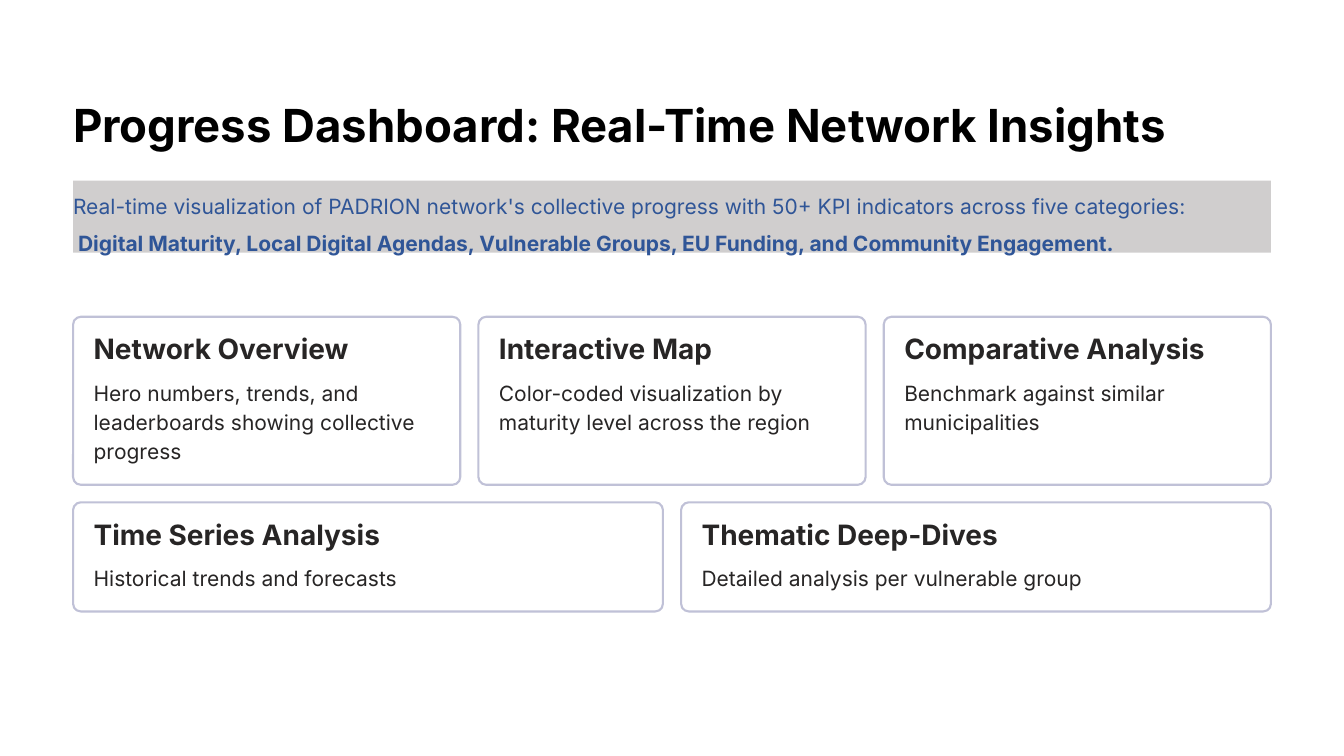
from pptx import Presentation
from pptx.dml.color import RGBColor
from pptx.enum.shapes import MSO_SHAPE
from pptx.enum.text import MSO_ANCHOR, PP_ALIGN
from pptx.util import Cm, Pt

RECT = MSO_SHAPE.RECTANGLE
ROUND = MSO_SHAPE.ROUNDED_RECTANGLE
TOP = MSO_ANCHOR.TOP
LEFT = PP_ALIGN.LEFT

COLORS = {
    "title": "000000",
    "band": "D0CECE",
    "intro": "2F5597",
    "card": "FFFFFF",
    "edge": "C0C1D7",
    "text": "272525",
}

deck = Presentation()
deck.slide_width, deck.slide_height = Cm(40.64), Cm(22.86)
slide = deck.slides.add_slide(deck.slide_layouts[6])
shapes = slide.shapes


def color(name):
    return RGBColor.from_string(COLORS[name])


def write(shape, text, size, ink, space, bold=False, wrap=True):
    frame = shape.text_frame
    frame.margin_left = frame.margin_right = 0
    frame.margin_top = frame.margin_bottom = 0
    frame.vertical_anchor = TOP
    frame.word_wrap = wrap
    frame.text = text
    for para in frame.paragraphs:
        para.alignment = LEFT
        para.line_spacing = space
        for run in para.runs:
            run.font.name = "Inter"
            run.font.size = Pt(size)
            run.font.bold = bold
            run.font.color.rgb = color(ink)


# Page grid, in centimetres
left, width, gap, pad = 2.21, 36.22, 0.55, 0.62

# Title
title = shapes.add_textbox(Cm(left), Cm(2.87), Cm(33.12), Cm(1.73))
write(title, "Progress Dashboard: Real-Time Network Insights",
      39, "title", Pt(48.5), bold=True, wrap=False)

# Intro band
band = shapes.add_shape(RECT, Cm(left), Cm(5.46), Cm(width), Cm(2.18))
band.shadow.inherit = False
band.fill.solid()
band.fill.fore_color.rgb = color("band")
band.line.fill.background()
write(band,
      "Real-time visualization of PADRION network's collective progress "
      "with 50+ KPI indicators across five categories:\n"
      " Digital Maturity, Local Digital Agendas, Vulnerable Groups, "
      "EU Funding, and Community Engagement.",
      18, "intro", 1.5)
band.text_frame.paragraphs[1].runs[0].font.bold = True

# Card rows: top, height, corner, cards
rows = [
    (9.58, 5.08, 0.046, [
        ("Network Overview",
         "Hero numbers, trends, and leaderboards showing collective progress"),
        ("Interactive Map",
         "Color-coded visualization by maturity level across the region"),
        ("Comparative Analysis",
         "Benchmark against similar municipalities"),
    ]),
    (15.19, 3.3, 0.07, [
        ("Time Series Analysis", "Historical trends and forecasts"),
        ("Thematic Deep-Dives", "Detailed analysis per vulnerable group"),
    ]),
]

for top, height, corner, cards in rows:
    wide = (width - gap * (len(cards) - 1)) / len(cards)
    inner = wide - 2 * pad
    for col, (name, detail) in enumerate(cards):
        x = left + col * (wide + gap)
        card = shapes.add_shape(ROUND, Cm(x), Cm(top), Cm(wide), Cm(height))
        card.adjustments[0] = corner
        card.shadow.inherit = False
        card.fill.solid()
        card.fill.fore_color.rgb = color("card")
        card.line.color.rgb = color("edge")
        card.line.width = Pt(1.8)

        head = shapes.add_textbox(Cm(x + pad), Cm(top + pad), Cm(inner), Cm(0.86))
        write(head, name, 24, "text", Pt(24), bold=True, wrap=False)

        body = shapes.add_textbox(Cm(x + pad), Cm(top + 1.8),
                                  Cm(inner), Cm(height - 1.8 - pad))
        write(body, detail, 18, "text", Pt(25))

deck.save("out.pptx")
